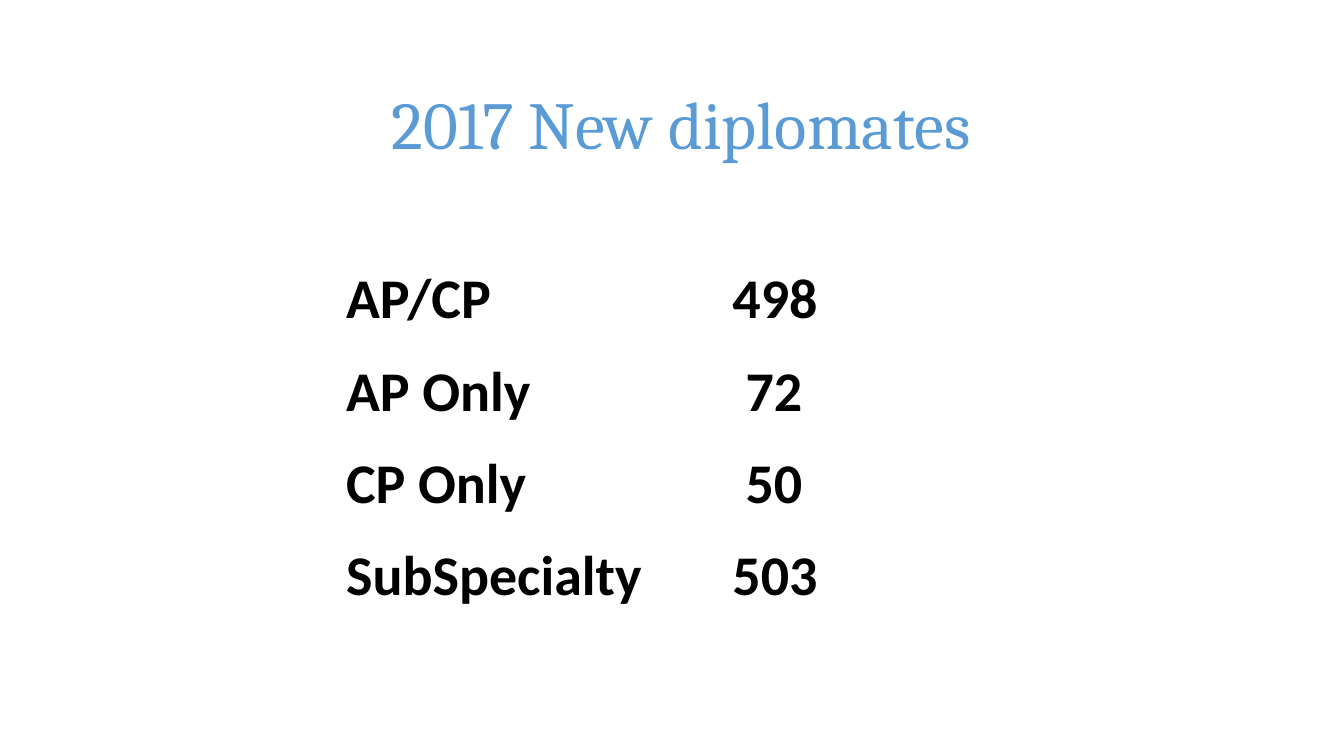
from pptx import Presentation
from pptx.dml.color import RGBColor
from pptx.enum.text import MSO_ANCHOR as Anchor, PP_ALIGN as Align
from pptx.util import Inches, Pt

WIDE, HIGH = Inches(13.33), Inches(7.5)
ROWS = [("AP/CP", "498"), ("AP Only", "72"), ("CP Only", "50"), ("SubSpecialty", "503")]
HEAD = {"name": "Cambria", "size": Pt(48), "bold": False}
BODY = {"name": "Calibri", "size": Pt(40), "bold": True}


def color(code):
    """Turn a hex string into a colour."""
    return RGBColor.from_string(code)


def share(left, top, width, height):
    """Turn shares of the slide's size into a box of lengths."""
    return int(left * WIDE), int(top * HIGH), int(width * WIDE), int(height * HIGH)


def style(para, form, code):
    """Apply font values and a colour to a paragraph."""
    for key, value in form.items():
        setattr(para.font, key, value)
    para.font.color.rgb = color(code)


def title(slide, box, text):
    """Place the title at the foot of its box."""
    shape = slide.shapes.title
    for key, value in zip(("left", "top", "width", "height"), box):
        setattr(shape, key, value)
    frame = shape.text_frame
    frame.text = text
    frame.vertical_anchor = Anchor.BOTTOM
    para = frame.paragraphs[0]
    para.alignment = Align.CENTER
    style(para, HEAD, "5B9BD5")


def table(slide, box, rows):
    """Fill the box with a plain table of labels and counts."""
    grid = slide.shapes.add_table(len(rows), 2, *box).table
    for col, part in zip(grid.columns, (0.575, 0.425)):
        col.width = int(box[2] * part)
    digits = max(len(count) for _, count in rows)
    for r, row in enumerate(rows):
        for c, text in enumerate(row):
            cell = grid.cell(r, c)
            cell.text = text
            cell.fill.solid()
            cell.fill.fore_color.rgb = color("FFFFFF")
            short = digits - len(text) if c else 0
            cell.margin_left = Inches(0.1 + 0.13 * short)
            style(cell.text_frame.paragraphs[0], BODY, "000000")


def main():
    """Build and save the slide."""
    deck = Presentation()
    deck.slide_width, deck.slide_height = WIDE, HIGH
    slide = deck.slides.add_slide(deck.slide_layouts[5])
    title(slide, share(0.1628, 0.056, 0.688, 0.1667), "2017 New diplomates")
    table(slide, share(0.25, 0.3445, 0.5, 0.489), ROWS)
    deck.save("out.pptx")


if __name__ == "__main__":
    main()
